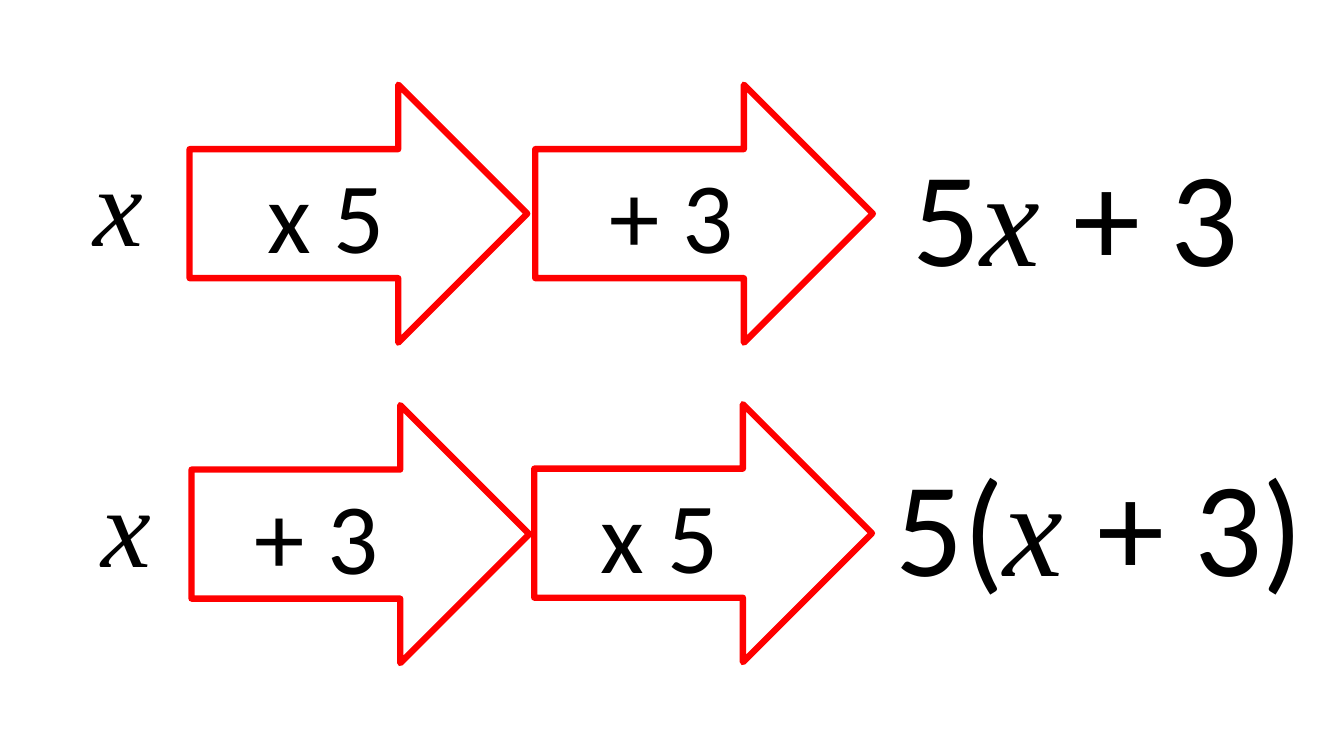
from pptx import Presentation
from pptx.dml.color import RGBColor
from pptx.enum.shapes import MSO_SHAPE
from pptx.enum.text import MSO_ANCHOR, MSO_AUTO_SIZE, PP_ALIGN
from pptx.util import Pt

RED = RGBColor(255, 0, 0)
BLACK = RGBColor(0, 0, 0)
SANS, SERIF = "Calibri", "Times New Roman"

# Content: each machine has an input, two steps and an output.
# Runs set in italic serif are marked True; places are (left, top).
MACHINES = [
    {
        "input": ([("x", True)], (59.8, 92.9)),
        "steps": [("x 5", (135.4, 60.5)), ("+ 3", (382.3, 60.5))],
        "output": ([("5", False), ("x ", True), ("+ 3", False)],
                   (644.4, 90.7), 249.1),
    },
    {
        "input": ([("x", True)], (65.5, 321.8)),
        "steps": [("+ 3 ", (136.8, 289.4)), ("x 5 ", (381.6, 288.7))],
        "output": ([("5(", False), ("x ", True), ("+ 3)", False)],
                   (632.2, 312.5), 311),
    },
]
ARROW = (241.2, 184.3)
INPUT = (100.8, 104.4)
OUT_TALL = 123.8

deck = Presentation()
deck.slide_width, deck.slide_height = Pt(960), Pt(540)
slide = deck.slides.add_slide(deck.slide_layouts[6])


def write(frame, runs, size, align=PP_ALIGN.LEFT, anchor=MSO_ANCHOR.TOP):
    """Fill a text frame with plain and italic runs."""
    frame.word_wrap = True
    frame.vertical_anchor = anchor
    line = frame.paragraphs[0]
    line.alignment = align
    for text, slant in runs:
        run = line.add_run()
        run.text = text
        run.font.name = SERIF if slant else SANS
        run.font.size = Pt(size)
        run.font.italic = slant
        run.font.color.rgb = BLACK


def add_term(runs, place, extent, size):
    box = slide.shapes.add_textbox(*map(Pt, place + extent))
    write(box.text_frame, runs, size)
    box.text_frame.auto_size = MSO_AUTO_SIZE.SHAPE_TO_FIT_TEXT


def add_step(text, place):
    arrow = slide.shapes.add_shape(MSO_SHAPE.RIGHT_ARROW,
                                   *map(Pt, place + ARROW))
    arrow.shadow.inherit = False
    arrow.fill.background()
    arrow.line.color.rgb = RED
    arrow.line.width = Pt(4.5)
    write(arrow.text_frame, [(text, False)], 72,
          align=PP_ALIGN.CENTER, anchor=MSO_ANCHOR.MIDDLE)


# Function machines, one row each
for machine in MACHINES:
    runs, place = machine["input"]
    add_term(runs, place, INPUT, 80)
    for text, place in machine["steps"]:
        add_step(text, place)
    runs, place, width = machine["output"]
    add_term(runs, place, (width, OUT_TALL), 96)

deck.save("out.pptx")
